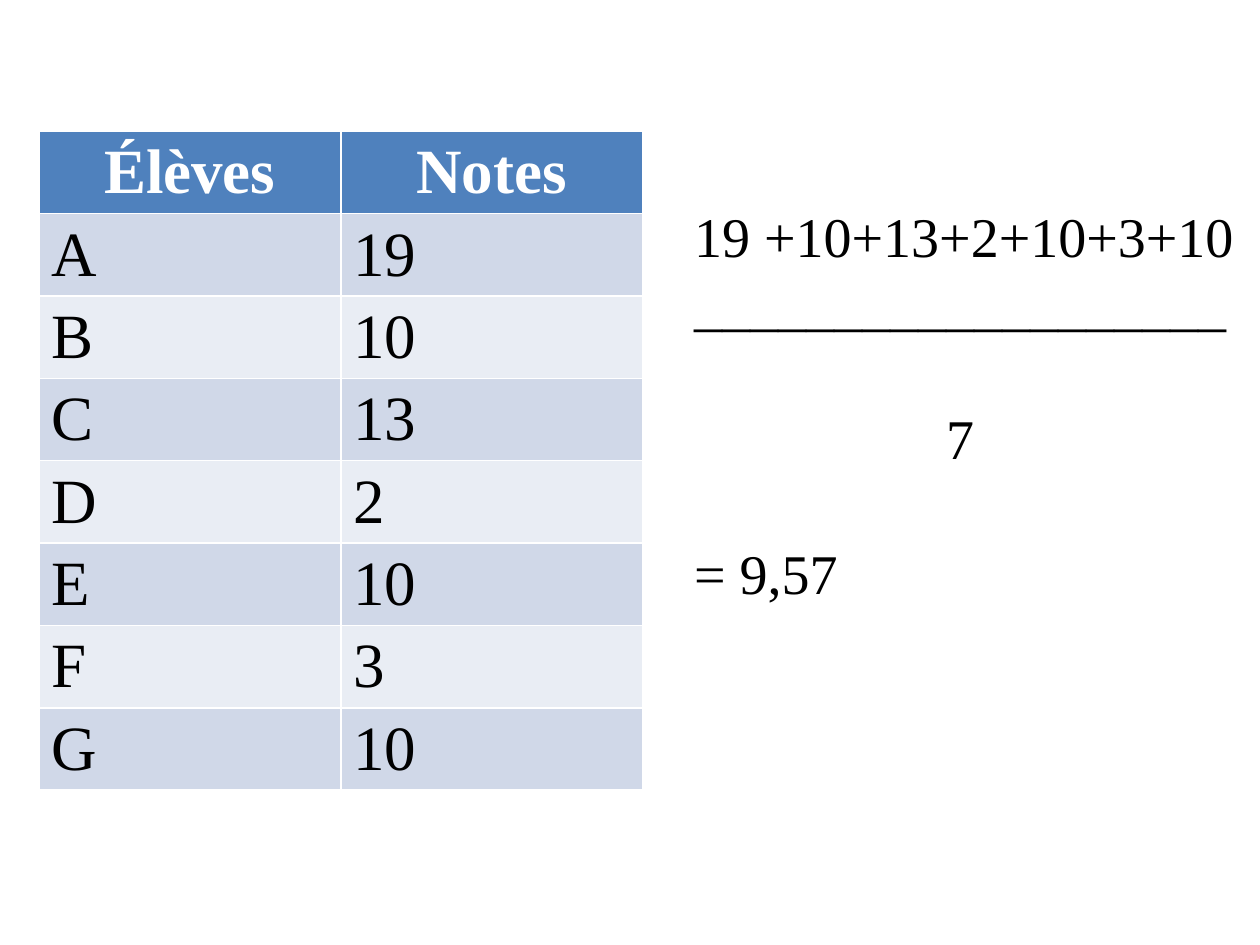
from dataclasses import dataclass

from pptx import Presentation
from pptx.dml.color import RGBColor
from pptx.enum.text import MSO_AUTO_SIZE, PP_ALIGN
from pptx.util import Inches, Pt

LEFT, CENTER = PP_ALIGN.LEFT, PP_ALIGN.CENTER
GROW = MSO_AUTO_SIZE.SHAPE_TO_FIT_TEXT
FONT = "Times New Roman"
WIDE, HIGH = Inches(10), Inches(7.5)
HEAD, BANDS = "4F81BD", ("D0D8E8", "E9EDF4")
LINE = 38.5  # pitch of the sum's lines, in points


@dataclass
class Mark:
    pupil: str
    note: int


@dataclass
class Step:
    text: str
    gap: float = 0  # lines left free above
    indent: float = 0  # inches


MARKS = [Mark(*pair) for pair in zip("ABCDEFG", (19, 10, 13, 2, 10, 3, 10))]
STEPS = [
    Step("19 +10+13+2+10+3+10"),
    Step("_" * 19),
    Step("7", gap=1, indent=2),
    Step("= 9,57", gap=1),
]


def color(code: str) -> RGBColor:
    return RGBColor.from_string(code)


def write(para, text: str, size: float = 36, ink: str = "000000",
          bold: bool = False, align=LEFT) -> None:
    para.alignment = align
    run = para.add_run()
    run.text = text
    font = run.font
    font.name, font.size, font.bold = FONT, Pt(size), bold
    font.color.rgb = color(ink)


def draw_cell(cell, text: str, fill: str, **style) -> None:
    cell.fill.solid()
    cell.fill.fore_color.rgb = color(fill)
    write(cell.text_frame.paragraphs[0], text, **style)


def draw_marks(slide, marks: list[Mark]) -> None:
    rows = len(marks) + 1
    table = slide.shapes.add_table(
        rows, 2, int(WIDE * 0.031), int(HIGH * 0.139),
        int(WIDE * 0.479), Inches(0.65) * rows).table
    for col, title in enumerate(("Élèves", "Notes")):
        draw_cell(table.cell(0, col), title, HEAD,
                  ink="FFFFFF", bold=True, align=CENTER)
    for row, mark in enumerate(marks, 1):
        for col, text in enumerate((mark.pupil, str(mark.note))):
            draw_cell(table.cell(row, col), text, BANDS[(row - 1) % 2])


def draw_sum(slide, steps: list[Step]) -> None:
    box = slide.shapes.add_textbox(
        int(WIDE * 0.541), int(HIGH * 0.207),
        int(WIDE * 0.459), int(HIGH * 0.444))
    frame = box.text_frame
    frame.word_wrap = True
    frame.auto_size = GROW
    for num, step in enumerate(steps):
        para = frame.add_paragraph() if num else frame.paragraphs[0]
        para.line_spacing = Pt(LINE)
        para.space_before = Pt(LINE * step.gap)
        write(para, step.text, size=32)
        if step.indent:
            para._p.get_or_add_pPr().set("marL", str(Inches(step.indent)))


def main() -> None:
    deck = Presentation()
    deck.slide_width, deck.slide_height = WIDE, HIGH
    slide = deck.slides.add_slide(deck.slide_layouts[6])
    # Table of marks on the left
    draw_marks(slide, MARKS)
    # Working of the mean on the right
    draw_sum(slide, STEPS)
    deck.save("out.pptx")


if __name__ == "__main__":
    main()
